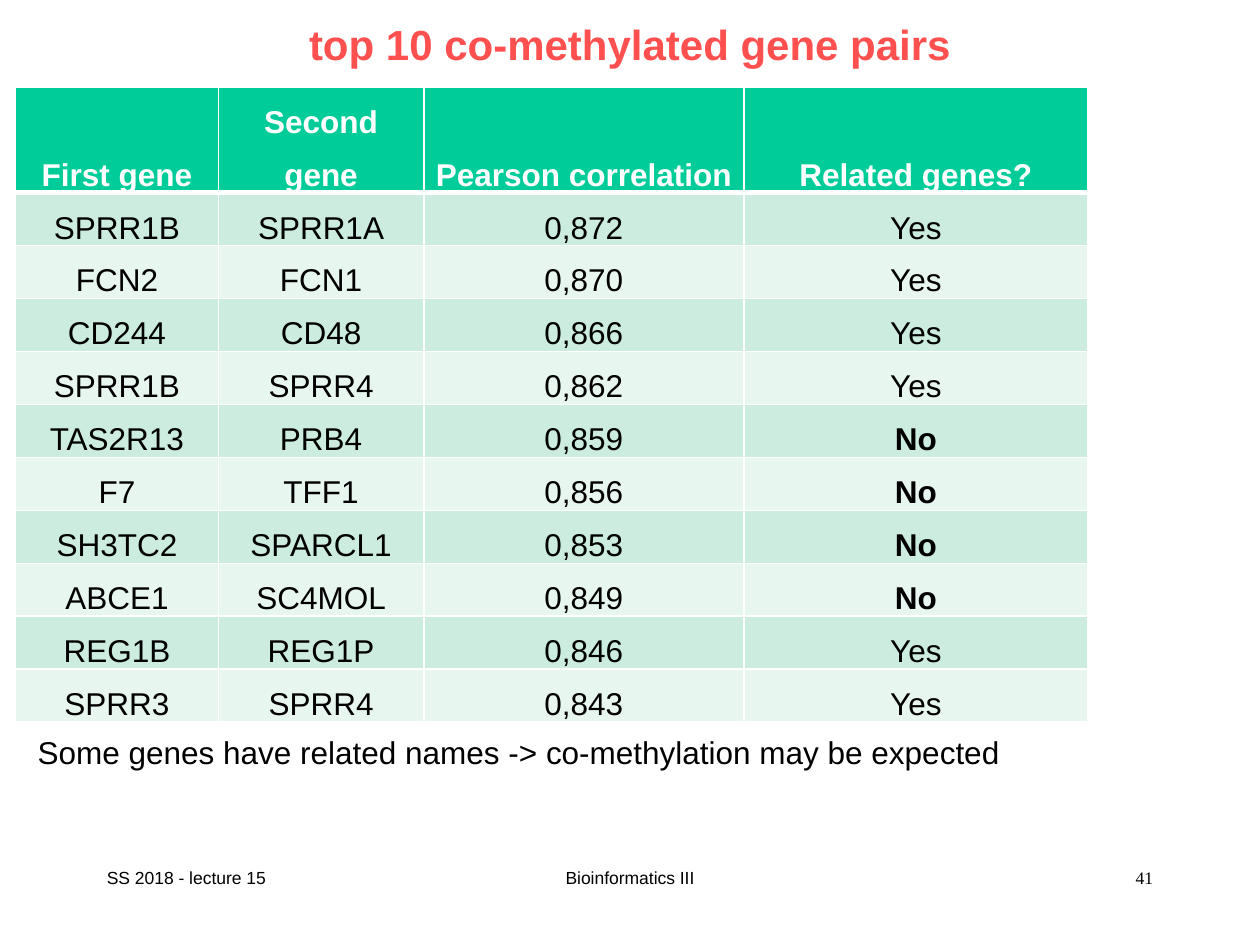
from lxml.etree import SubElement as Sub
from pptx import Presentation
from pptx.dml.color import RGBColor as RGB
from pptx.enum.text import MSO_ANCHOR as Anchor, PP_ALIGN as Align
from pptx.oxml.ns import qn
from pptx.util import Pt

# Content
TITLE = "top 10 co-methylated gene pairs"
HEAD = ("First gene", "Second gene", "Pearson correlation", "Related genes?")
PAIRS = [
    ("SPRR1B", "SPRR1A", "0,872", "Yes"),
    ("FCN2", "FCN1", "0,870", "Yes"),
    ("CD244", "CD48", "0,866", "Yes"),
    ("SPRR1B", "SPRR4", "0,862", "Yes"),
    ("TAS2R13", "PRB4", "0,859", "No"),
    ("F7", "TFF1", "0,856", "No"),
    ("SH3TC2", "SPARCL1", "0,853", "No"),
    ("ABCE1", "SC4MOL", "0,849", "No"),
    ("REG1B", "REG1P", "0,846", "Yes"),
    ("SPRR3", "SPRR4", "0,843", "Yes"),
]
NOTE = "Some genes have related names -> co-methylation may be expected"

THEME = {
    "sans": "Arial", "serif": "Times New Roman",
    "big": 24, "text": 18, "small": 10,
    "title": "FF5050", "ink": "000000", "white": "FFFFFF",
    "head": "00CC99", "bands": ("CBECDE", "E7F6EF"),
}

# Places: left, top, width, height
TOP = (54, 7.2, 612, 36)
GRID = (8.9, 49.7)
COLS = (115.9, 117.4, 182.9, 196.6)
ROW = 29.5
BELOW = (14.4, 411.8, 666, 30.2)
FOOT_Y, FOOT_H = 491.8, 36
FEET = [  # text, left, width, alignment, font
    ("SS 2018 - lecture 15", 54, 150, Align.LEFT, "sans"),
    ("Bioinformatics III", 246, 228, Align.CENTER, "sans"),
    ("41", 516, 150, Align.RIGHT, "serif"),
]


def assign(obj, vals):
    for name, val in vals.items():
        setattr(obj, name, val)


def write(frame, text, size, tint="ink", face="sans", bold=False, **para):
    """Fill a text frame with one styled paragraph."""
    line = frame.paragraphs[0]
    assign(line, para)
    run = line.add_run()
    run.text = text
    assign(run.font, {"name": THEME[face], "size": Pt(THEME[size]), "bold": bold})
    run.font.color.rgb = RGB.from_string(THEME[tint])


def add_text(slide, box, text, size, **style):
    frame = slide.shapes.add_textbox(*map(Pt, box)).text_frame
    frame.word_wrap = True
    write(frame, text, size, **style)


def edge(cell, widths):
    """Draw white cell borders, given side by side in points."""
    props = cell._tc.get_or_add_tcPr()
    for side, wide in widths.items():
        line = Sub(props, qn(f"a:ln{side}"), w=str(Pt(wide)))
        fill = Sub(line, qn("a:solidFill"))
        Sub(fill, qn("a:srgbClr"), val=THEME["white"])


def add_grid(slide):
    rows = [HEAD, *PAIRS]
    size = (sum(COLS), ROW * len(rows))
    grid = slide.shapes.add_table(len(rows), len(COLS), *map(Pt, GRID + size)).table
    for col, wide in zip(grid.columns, COLS):
        col.width = Pt(wide)
    for r, row in enumerate(rows):
        grid.rows[r].height = Pt(ROW)
        top = r == 0
        back = THEME["head"] if top else THEME["bands"][(r - 1) % 2]
        for c, text in enumerate(row):
            cell = grid.cell(r, c)
            assign(cell, {
                "margin_left": Pt(5.4), "margin_right": Pt(5.4),
                "margin_top": 0, "margin_bottom": 0,
                "vertical_anchor": Anchor.BOTTOM,
            })
            edge(cell, {"L": 1, "R": 1, "T": 3 if r == 1 else 1, "B": 3 if top else 1})
            cell.fill.solid()
            cell.fill.fore_color.rgb = RGB.from_string(back)
            write(cell.text_frame, text, "text", tint="white" if top else "ink",
                  bold=top or text == "No", alignment=Align.CENTER, line_spacing=1.5)


def main():
    deck = Presentation()
    assign(deck, {"slide_width": Pt(720), "slide_height": Pt(540)})
    slide = deck.slides.add_slide(deck.slide_layouts[5])

    # Title
    title = slide.shapes.title
    assign(title, dict(zip(("left", "top", "width", "height"), map(Pt, TOP))))
    assign(title.text_frame, {"vertical_anchor": Anchor.MIDDLE, "word_wrap": True})
    write(title.text_frame, TITLE, "big", tint="title", bold=True,
          alignment=Align.CENTER)

    # Table and the remark below it
    add_grid(slide)
    add_text(slide, BELOW, NOTE, "text", line_spacing=Pt(25))

    # Footer
    for text, left, wide, side, face in FEET:
        add_text(slide, (left, FOOT_Y, wide, FOOT_H), text, "small",
                 face=face, alignment=side)

    deck.save("out.pptx")


if __name__ == "__main__":
    main()
